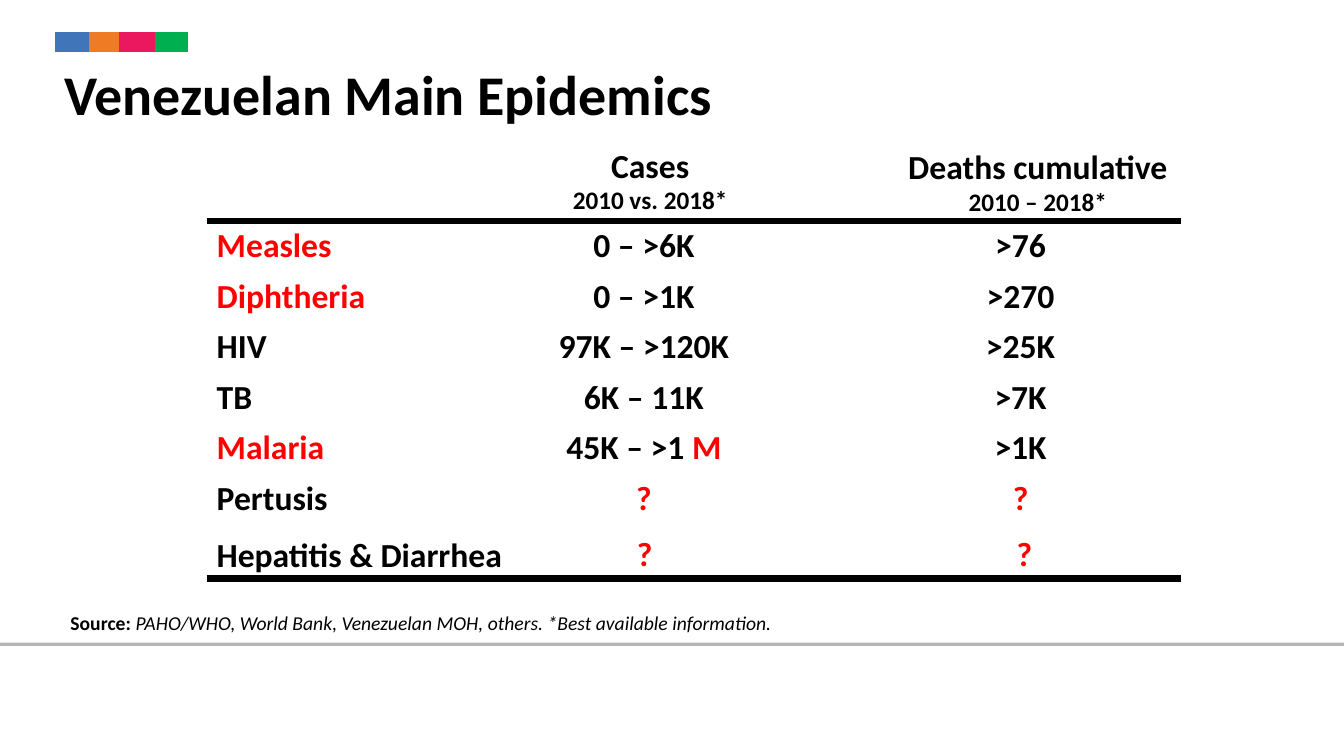
from itertools import pairwise

from lxml.etree import SubElement
from pptx import Presentation
from pptx.dml.color import RGBColor
from pptx.enum.shapes import MSO_CONNECTOR
from pptx.enum.text import MSO_ANCHOR, MSO_AUTO_SIZE, PP_ALIGN
from pptx.oxml.ns import qn
from pptx.util import Inches, Pt

BLACK = RGBColor(0x00, 0x00, 0x00)
RED = RGBColor(0xFF, 0x00, 0x00)
GREY = RGBColor(0x51, 0x53, 0x51)
BLUE = RGBColor(0x41, 0x75, 0xBA)
ORANGE = RGBColor(0xEF, 0x7B, 0x25)
PINK = RGBColor(0xEC, 0x18, 0x5F)
GREEN = RGBColor(0x00, 0xB0, 0x50)

FONT = "Calibri"
COLUMNS, ROWS = 16, 9
WIDTH, HEIGHT = Inches(13.33), Inches(7.5)
TABLE_TOP, ROW_HEIGHT = 2.63, 0.6
TABLE_LEFT, TABLE_RIGHT, TABLE_BOTTOM = 2.46, 14.06, 6.89

STRIPE_EDGES = (0.65, 1.06, 1.42, 1.84, 2.24)
STRIPE_COLOURS = (BLUE, ORANGE, PINK, GREEN)
DISEASES = (("Measles", RED), ("Diphtheria", RED), ("HIV", BLACK),
            ("TB", BLACK), ("Malaria", RED), ("Pertusis", BLACK))
CASES = ("0 – >6K", "0 – >1K", "97K – >120K", "6K – 11K")
DEATHS = (">76", ">270", ">25K", ">7K", ">1K")


def across(columns):
    """Turn grid columns into a horizontal length."""
    return round(WIDTH * columns / COLUMNS)


def down(rows):
    """Turn grid rows into a vertical length."""
    return round(HEIGHT * rows / ROWS)


def area(left, top, width, height):
    """Turn a grid area into slide lengths."""
    return across(left), down(top), across(width), down(height)


def add_span(para, text, size=24, colour=BLACK, bold=True, italic=False):
    """Append one formatted run to a paragraph."""
    span = para.add_run()
    span.text = text
    span.font.name = FONT
    span.font.size = Pt(size)
    span.font.bold = bold
    span.font.italic = italic
    span.font.color.rgb = colour


def add_line(page, left, right, top, colour, weight, opacity=None):
    """Draw a horizontal rule, optionally see-through."""
    line = page.shapes.add_connector(
        MSO_CONNECTOR.STRAIGHT, across(left), down(top), across(right), down(top))
    line.line.color.rgb = colour
    line.line.width = Pt(weight)
    properties = line._element.spPr
    SubElement(properties, qn("a:effectLst"))
    if opacity:
        shade = properties.find(".//" + qn("a:srgbClr"))
        SubElement(shade, qn("a:alpha")).set("val", str(opacity * 1000))


def add_title(page, text, place):
    """Place and format the title placeholder."""
    title = page.shapes.title
    title.left, title.top, title.width, title.height = area(*place)
    frame = title.text_frame
    frame.auto_size = MSO_AUTO_SIZE.NONE
    frame.vertical_anchor = MSO_ANCHOR.TOP
    frame.paragraphs[0].alignment = PP_ALIGN.LEFT
    add_span(frame.paragraphs[0], text, size=40)


def add_text(page, place, lines, align=PP_ALIGN.LEFT, wrap=True):
    """Add a text box whose lines are lists of (text, format) runs."""
    frame = page.shapes.add_textbox(*area(*place)).text_frame
    frame.word_wrap = wrap
    for index, spans in enumerate(lines):
        para = frame.add_paragraph() if index else frame.paragraphs[0]
        para.alignment = align
        for text, style in spans:
            add_span(para, text, **style)


def add_header(page, place, heading, period):
    """Add a column heading above its period."""
    add_text(page, place, [[(heading, {})], [(period, {"size": 18})]], PP_ALIGN.CENTER)


def add_column(page, left, width, entries, align=PP_ALIGN.CENTER):
    """Add a one-column table whose entries are lists of (text, colour) runs."""
    place = area(left, TABLE_TOP, width, ROW_HEIGHT * len(entries))
    table = page.shapes.add_table(len(entries), 1, *place).table
    table.first_row = table.horz_banding = False
    for row, spans in enumerate(entries):
        table.rows[row].height = down(ROW_HEIGHT)
        cell = table.cell(row, 0)
        cell.fill.background()
        para = cell.text_frame.paragraphs[0]
        para.alignment = align
        for text, colour in spans:
            add_span(para, text, colour=colour)


def main():
    """Build the epidemics slide."""
    deck = Presentation()
    deck.slide_width, deck.slide_height = WIDTH, HEIGHT
    page = deck.slides.add_slide(deck.slide_layouts[5])

    for (left, right), colour in zip(pairwise(STRIPE_EDGES), STRIPE_COLOURS):
        add_line(page, left, right, 0.5, colour, 14.5)
    add_line(page, 0, COLUMNS, 7.67, GREY, 2.5, opacity=42)
    add_title(page, "Venezuelan Main Epidemics", (0.65, 0.65, 14.18, 0.92))

    add_header(page, (6.41, 1.66, 2.66, 0.97), "Cases", "2010 vs. 2018*")
    add_header(page, (10.38, 1.68, 3.95, 0.97), "Deaths cumulative", "2010 – 2018*")

    unknown = [("?", RED)]
    cases = [[(text, BLACK)] for text in CASES]
    cases += [[("45K – >1 ", BLACK), ("M", RED)], unknown]
    deaths = [[(text, BLACK)] for text in DEATHS] + [unknown]
    add_column(page, TABLE_LEFT, 2.32, [[entry] for entry in DISEASES], PP_ALIGN.LEFT)
    add_column(page, 6.25, 2.83, cases)
    add_column(page, 10.99, 2.32, deaths)

    add_text(page, (TABLE_LEFT, 6.3, 3.92, 0.6), [[("Hepatitis & Diarrhea", {})]])
    for left, top in ((7.46, 6.28), (11.98, 6.29)):
        add_text(page, (left, top, 0.43, 0.6), [[("?", {"colour": RED})]],
                 PP_ALIGN.CENTER, wrap=False)

    add_text(page, (0.72, 7.21, 9.43, 0.41), [[
        ("Source: ", {"size": 14}),
        ("PAHO/WHO, World Bank, Venezuelan MOH, others. *Best available information.",
         {"size": 14, "bold": False, "italic": True})]])
    add_line(page, TABLE_LEFT, TABLE_RIGHT, TABLE_TOP, BLACK, 4.5)
    add_line(page, TABLE_LEFT, TABLE_RIGHT, TABLE_BOTTOM, BLACK, 4.75)
    deck.save("out.pptx")


if __name__ == "__main__":
    main()
